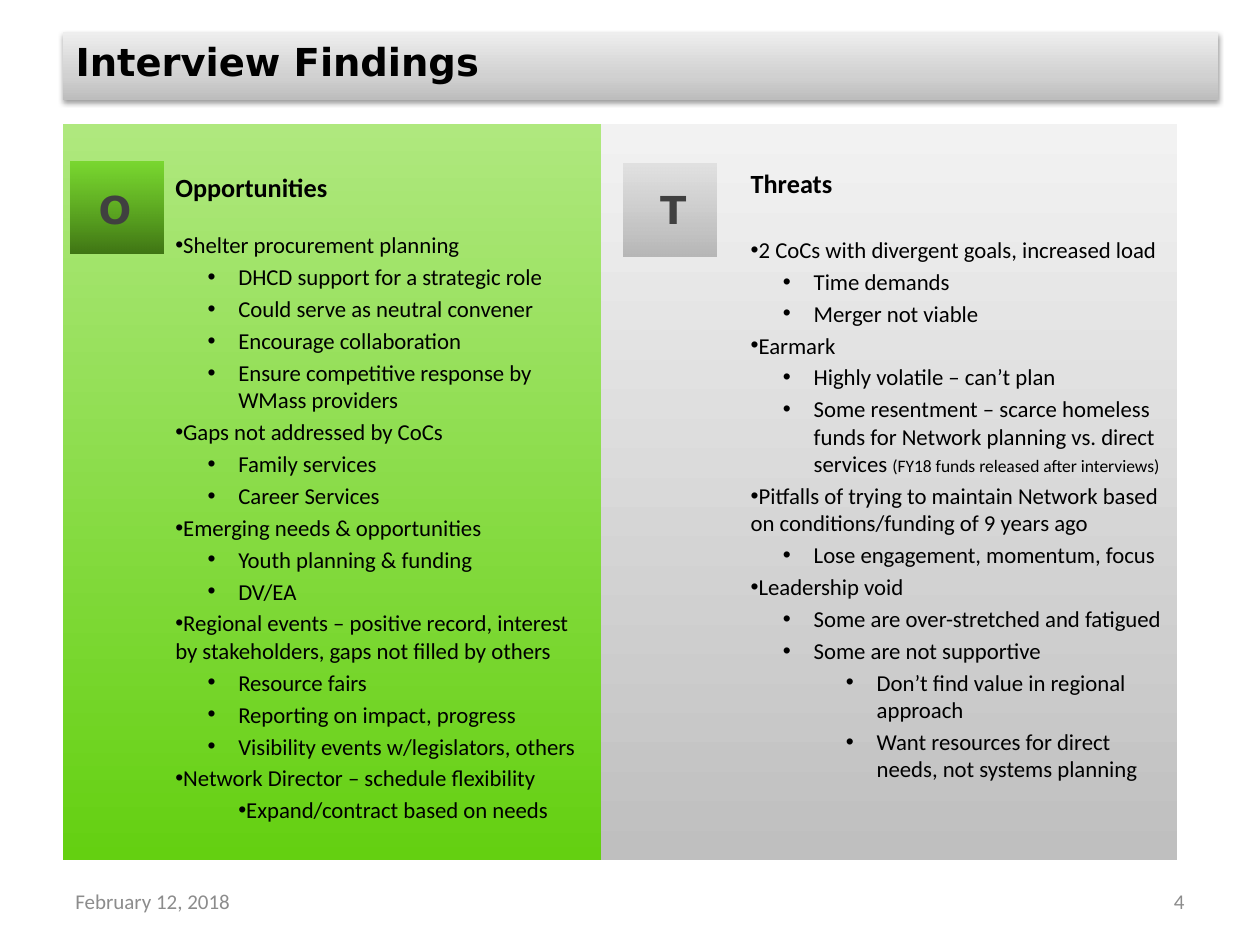
from dataclasses import dataclass

from lxml.etree import SubElement
from pptx import Presentation
from pptx.dml.color import RGBColor
from pptx.enum.shapes import MSO_SHAPE
from pptx.enum.text import MSO_ANCHOR, MSO_AUTO_SIZE, PP_ALIGN
from pptx.oxml import parse_xml
from pptx.oxml.ns import nsdecls, qn
from pptx.util import Cm, Pt


@dataclass(frozen=True)
class Theme:
    body_font: str = "Calibri"
    display_font: str = "DejaVu Sans"
    black: str = "000000"
    letter: str = "404040"
    footer: str = "8C8C8C"
    display_size: float = 22
    heading_size: float = 15
    list_size: float = 13
    aside_size: float = 10
    footer_size: float = 12
    # Gradient stops: position, colour, opacity (all but the colour in percent)
    banner: tuple = ((0, "EEEEEE", 100), (65, "D1D1D1", 100), (100, "BDBDBD", 100))
    green_panel: tuple = ((0, "AFE87E", 100), (100, "64D011", 100))
    grey_panel: tuple = ((0, "F2F2F2", 100), (100, "BFBFBF", 100))
    green_tile: tuple = ((0, "64D011", 70), (100, "326609", 88))
    grey_tile: tuple = ((0, "D9D9D9", 66), (100, "A6A6A6", 75))


theme = Theme()


def fill_downward(shape, stops):
    """Fill a shape with a top-to-bottom gradient and no outline."""
    stop_xml = "".join(
        f'<a:gs pos="{pos * 1000}"><a:srgbClr val="{color}">'
        f'<a:alpha val="{opacity * 1000}"/></a:srgbClr></a:gs>'
        for pos, color, opacity in stops
    )
    shape.line.fill.background()
    shape.fill.background()
    no_fill = shape._element.spPr.find(qn("a:noFill"))
    no_fill.getparent().replace(no_fill, parse_xml(
        f'<a:gradFill {nsdecls("a")} rotWithShape="1"><a:gsLst>{stop_xml}</a:gsLst>'
        '<a:lin ang="5400000" scaled="0"/></a:gradFill>'))
    shape.shadow.inherit = False


def style(paragraph, font, size, color, bold=False):
    for run in paragraph.runs:
        run.font.name = font
        run.font.size = Pt(size)
        run.font.bold = bold
        run.font.color.rgb = RGBColor.from_string(color)


prs = Presentation()
prs.slide_width, prs.slide_height = Cm(25.4), Cm(19.05)
slide = prs.slides.add_slide(prs.slide_layouts[3])  # Two Content
shapes = slide.shapes

# Title banner
banner = shapes.title
banner.left, banner.top, banner.width, banner.height = Cm(1.27), Cm(0.64), Cm(23.29), Cm(1.37)
fill_downward(banner, theme.banner)
effects = banner._element.spPr.find(qn("a:effectLst"))
shadow = SubElement(effects, qn("a:outerShdw"), blurRad=str(Pt(3.1)), dist=str(Pt(1.6)),
                    dir="5400000", rotWithShape="0")
shadow_color = SubElement(shadow, qn("a:srgbClr"), val=theme.black)
SubElement(shadow_color, qn("a:alpha"), val="38000")
banner.text_frame.text = "Interview Findings"
banner.text_frame.vertical_anchor = MSO_ANCHOR.TOP
banner.text_frame.auto_size = MSO_AUTO_SIZE.NONE
banner_line = banner.text_frame.paragraphs[0]
banner_line.alignment = PP_ALIGN.LEFT
style(banner_line, theme.display_font, theme.display_size, theme.black, bold=True)

# Findings: (depth, text, small aside)
opportunities = [
    (0, "Shelter procurement planning", ""),
    (1, "DHCD support for a strategic role", ""),
    (1, "Could serve as neutral convener", ""),
    (1, "Encourage collaboration", ""),
    (1, "Ensure competitive response by WMass providers", ""),
    (0, "Gaps not addressed by CoCs", ""),
    (1, "Family services", ""),
    (1, "Career Services", ""),
    (0, "Emerging needs & opportunities", ""),
    (1, "Youth planning & funding", ""),
    (1, "DV/EA", ""),
    (0, "Regional events – positive record, interest by stakeholders, "
        "gaps not filled by others", ""),
    (1, "Resource fairs", ""),
    (1, "Reporting on impact, progress", ""),
    (1, "Visibility events w/legislators, others", ""),
    (0, "Network Director – schedule flexibility", ""),
    (1, "Expand/contract based on needs", ""),
]
threats = [
    (0, "2 CoCs with divergent goals, increased load", ""),
    (1, "Time demands", ""),
    (1, "Merger not viable", ""),
    (0, "Earmark", ""),
    (1, "Highly volatile – can’t plan", ""),
    (1, "Some resentment – scarce homeless funds for Network planning vs. direct services ",
     "(FY18 funds released after interviews)"),
    (0, "Pitfalls of trying to maintain Network based on conditions/funding of 9 years ago", ""),
    (1, "Lose engagement, momentum, focus", ""),
    (0, "Leadership void", ""),
    (1, "Some are over-stretched and fatigued", ""),
    (1, "Some are not supportive", ""),
    (2, "Don’t find value in regional approach", ""),
    (2, "Want resources for direct needs, not systems planning", ""),
]

# Columns: panel left/width, list left/top/height, gap under heading,
# tile left/top, letter left/alignment
columns = [
    ("Opportunities", opportunities, theme.green_panel, theme.green_tile,
     (1.27, 10.85), (3.28, 3.33, 14.45), 13.4, (1.42, 3.25), (1.7, PP_ALIGN.CENTER)),
    ("Threats", threats, theme.grey_panel, theme.grey_tile,
     (12.12, 11.61), (14.88, 3.25, 13.51), 18.3, (12.57, 3.3), (13.06, PP_ALIGN.LEFT)),
]
tight_bullet = "Expand/contract based on needs"

for index, (heading, findings, panel_fill, tile_fill, panel_at, list_at,
            heading_gap, tile_at, (letter_left, letter_align)) in enumerate(columns):
    # Panel, placed behind the placeholders
    panel = shapes.add_shape(MSO_SHAPE.RECTANGLE, Cm(panel_at[0]), Cm(2.51),
                             Cm(panel_at[1]), Cm(14.83))
    fill_downward(panel, panel_fill)
    shapes._spTree.insert(2 + index, panel._element)

    # Heading and list
    body = slide.placeholders[index + 1]
    body.left, body.top, body.height = (Cm(length) for length in list_at)
    body.width = Cm(8.84)
    frame = body.text_frame
    frame.auto_size = MSO_AUTO_SIZE.NONE
    frame.text = heading
    heading_line = frame.paragraphs[0]
    heading_line.space_before = Pt(0)
    heading_line.space_after = Pt(heading_gap)
    heading_props = heading_line._p.get_or_add_pPr()
    heading_props.set("marL", "0")
    heading_props.set("indent", "0")
    SubElement(heading_props, qn("a:buNone"))
    style(heading_line, theme.body_font, theme.heading_size, theme.black, bold=True)

    for depth, text, aside in findings:
        finding = frame.add_paragraph()
        finding.text = text
        finding.level = depth
        finding.space_before = Pt(0.2 * theme.list_size)
        hang = 0.62 if depth and text != tight_bullet else 0
        props = finding._p.get_or_add_pPr()
        props.set("marL", str(Cm(1.27 * depth)))
        props.set("indent", str(Cm(-hang)))
        SubElement(props, qn("a:buChar"), char="•")
        if aside:
            finding.add_run().text = aside
        style(finding, theme.body_font, theme.list_size, theme.black)
        if aside:
            finding.runs[-1].font.size = Pt(theme.aside_size)

    # Letter tile
    tile = shapes.add_shape(MSO_SHAPE.RECTANGLE, Cm(tile_at[0]), Cm(tile_at[1]),
                            Cm(1.87), Cm(1.87))
    fill_downward(tile, tile_fill)
    letter = shapes.add_textbox(Cm(letter_left), Cm(3.63), Cm(1.24), Cm(1.19)).text_frame
    letter.word_wrap = True
    letter.text = heading[0]
    letter.paragraphs[0].alignment = letter_align
    style(letter.paragraphs[0], theme.display_font, theme.display_size, theme.letter, bold=True)

# Footer
for text, left, alignment in (("February 12, 2018", 1.27, PP_ALIGN.LEFT),
                              ("4", 18.21, PP_ALIGN.RIGHT)):
    footer = shapes.add_textbox(Cm(left), Cm(17.65), Cm(5.92), Cm(1.02)).text_frame
    footer.word_wrap = True
    footer.vertical_anchor = MSO_ANCHOR.MIDDLE
    footer.text = text
    footer.paragraphs[0].alignment = alignment
    style(footer.paragraphs[0], theme.body_font, theme.footer_size, theme.footer)

prs.save("out.pptx")
